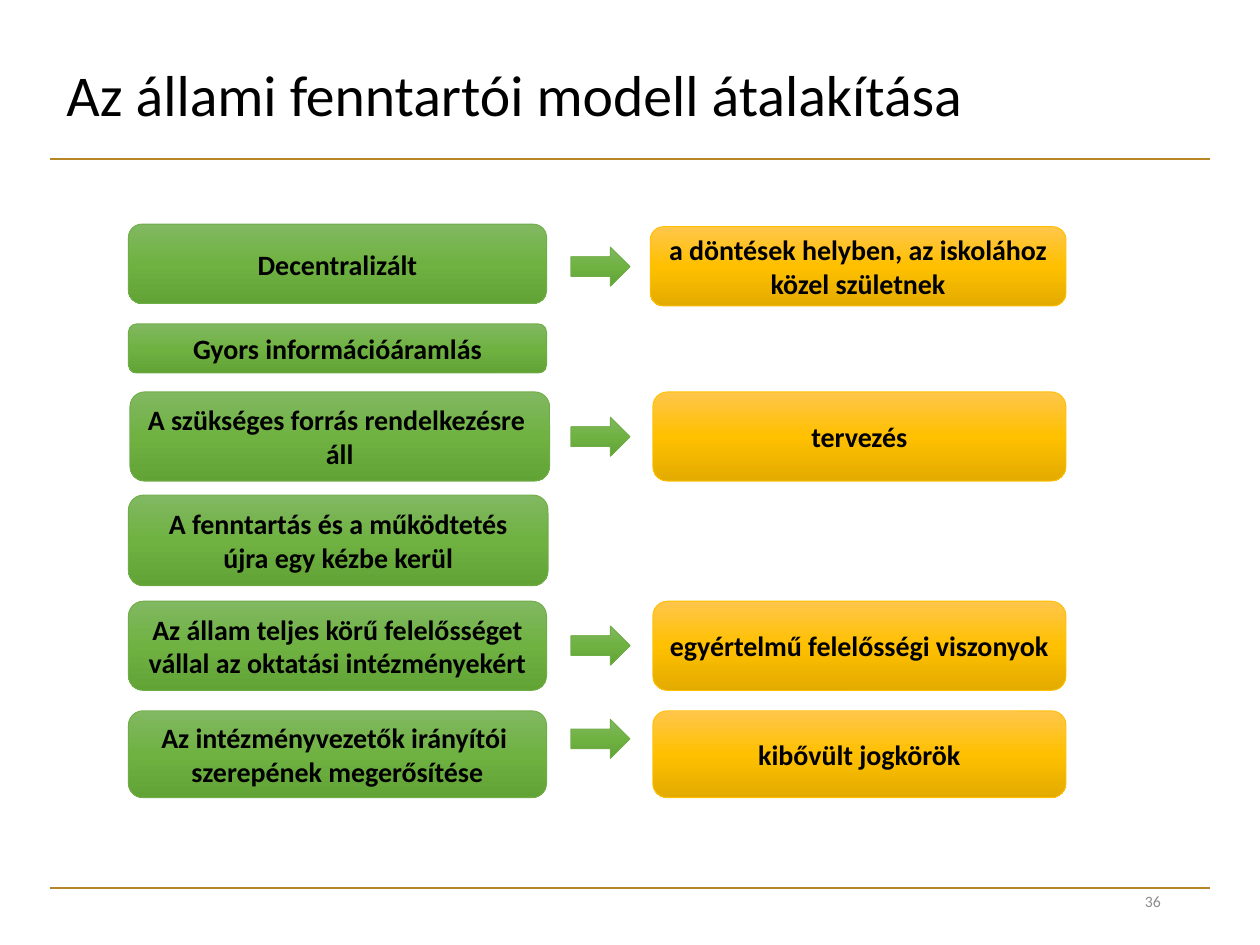
import copy
from dataclasses import dataclass

import lxml.etree
import pptx
import pptx.dml.color
import pptx.enum.shapes
import pptx.enum.text
import pptx.oxml.ns
import pptx.util

Cm = pptx.util.Cm
Pt = pptx.util.Pt
RGB = pptx.dml.color.RGBColor.from_string
SHAPE = pptx.enum.shapes.MSO_SHAPE
ALIGN = pptx.enum.text.PP_ALIGN
qn = pptx.oxml.ns.qn


@dataclass(frozen=True)
class Palette:
    stops: tuple
    line: str


@dataclass(frozen=True)
class Theme:
    font: str = "Calibri"
    text: str = "000000"
    number: str = "8C8C8C"
    rule: str = "B78727"
    title_size: int = 33
    box_size: int = 16
    number_size: int = 9
    green: Palette = Palette(("81B861", "6FB242", "62A336"), "70AD47")
    amber: Palette = Palette(("FFC64B", "FFC000", "E3AB00"), "FFC000")


THEME = Theme()

ARROW_LEFT, ARROW_WIDTH, ARROW_HEIGHT = 11.51, 1.19, 0.79

# Measure box, its text, arrow top, outcome box, its text; boxes are left, top, width, height in cm
ROWS = [
    ((2.59, 4.52, 8.43, 1.6), "Decentralizált",
     4.98, (13.11, 4.57, 8.38, 1.6), "a döntések helyben, az iskolához közel születnek"),
    ((2.59, 6.53, 8.43, 0.99), "Gyors információáramlás", None, None, None),
    ((2.62, 7.9, 8.46, 1.8), "A szükséges forrás rendelkezésre \náll",
     8.41, (13.16, 7.9, 8.33, 1.8), "tervezés"),
    ((2.59, 9.98, 8.46, 1.83), "A fenntartás és a működtetés újra egy kézbe kerül",
     None, None, None),
    ((2.59, 12.12, 8.43, 1.8),
     "Az állam teljes körű felelősséget vállal az oktatási intézményekért",
     12.62, (13.16, 12.12, 8.33, 1.8), "egyértelmű felelősségi viszonyok"),
    ((2.59, 14.33, 8.43, 1.75), "Az intézményvezetők irányítói \nszerepének megerősítése",
     14.5, (13.16, 14.33, 8.33, 1.75), "kibővült jogkörök"),
]


def set_text(sp, text, size, color, align, bold=False, spacing=None):
    tf = sp.text_frame
    tf.word_wrap = True
    tf.vertical_anchor = pptx.enum.text.MSO_ANCHOR.MIDDLE
    tf.text = text
    for p in tf.paragraphs:
        p.alignment = align
        p.line_spacing = spacing
        for r in p.runs:
            r.font.name = THEME.font
            r.font.size = Pt(size)
            r.font.bold = bold
            r.font.color.rgb = RGB(color)


def add_label(s, rect, text, size, color, align, spacing=None):
    sp = s.shapes.add_textbox(*map(Cm, rect))
    set_text(sp, text, size, color, align, spacing=spacing)


def add_rule(s, y):
    line = s.shapes.add_connector(
        pptx.enum.shapes.MSO_CONNECTOR.STRAIGHT, Cm(1), Cm(y), Cm(24.4), Cm(y))
    line.line.color.rgb = RGB(THEME.rule)
    line.line.width = Pt(1)
    lxml.etree.SubElement(line._element.spPr, qn("a:effectLst"))


def fill_gradient(sp, colors):
    """Fill from top to bottom with three evenly spaced stops."""
    sp.fill.gradient()
    sp.fill.gradient_angle = 270
    stops = sp._element.spPr.find(qn("a:gradFill")).find(qn("a:gsLst"))
    stops.insert(1, copy.deepcopy(stops[0]))
    for i, (stop, color) in enumerate(zip(sp.fill.gradient_stops, colors)):
        stop.position = i / 2
        stop.color.rgb = RGB(color)


def add_block(s, kind, rect, palette):
    sp = s.shapes.add_shape(kind, *map(Cm, rect))
    sp.shadow.inherit = False
    fill_gradient(sp, palette.stops)
    sp.line.color.rgb = RGB(palette.line)
    sp.line.width = Pt(0.5)
    return sp


def add_box(s, rect, text, palette):
    sp = add_block(s, SHAPE.ROUNDED_RECTANGLE, rect, palette)
    set_text(sp, text, THEME.box_size, THEME.text, ALIGN.CENTER, bold=True)


def main():
    prs = pptx.Presentation()
    prs.slide_width, prs.slide_height = Cm(25.4), Cm(19.05)
    s = prs.slides.add_slide(prs.slide_layouts[6])

    for y in (3.2, 17.9):
        add_rule(s, y)
    add_label(s, (1.09, 0.13, 21.9, 3.68), "Az állami fenntartói modell átalakítása",
              THEME.title_size, THEME.text, ALIGN.LEFT, spacing=0.9)
    add_label(s, (17.93, 17.65, 5.72, 1.02), "36",
              THEME.number_size, THEME.number, ALIGN.RIGHT)

    for measure_rect, measure, arrow_top, outcome_rect, outcome in ROWS:
        add_box(s, measure_rect, measure, THEME.green)
        if outcome:
            add_block(s, SHAPE.RIGHT_ARROW,
                      (ARROW_LEFT, arrow_top, ARROW_WIDTH, ARROW_HEIGHT), THEME.green)
            add_box(s, outcome_rect, outcome, THEME.amber)

    prs.save("out.pptx")


if __name__ == "__main__":
    main()
